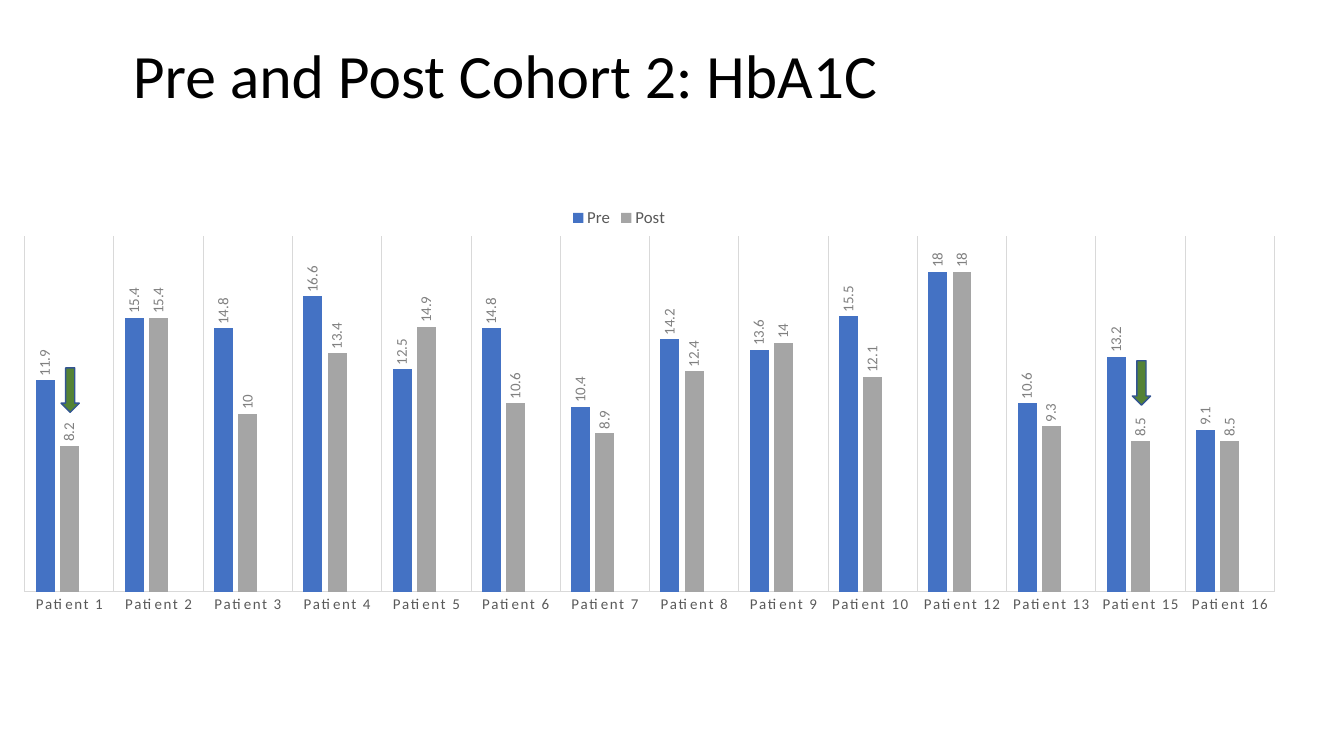
from lxml import etree
from pptx import Presentation
from pptx.chart.data import CategoryChartData
from pptx.dml.color import RGBColor
from pptx.enum.chart import XL_CHART_TYPE as ChartType
from pptx.enum.chart import XL_LABEL_POSITION as LabelPosition
from pptx.enum.chart import XL_LEGEND_POSITION as LegendPosition
from pptx.enum.chart import XL_TICK_LABEL_POSITION as TickLabelPosition
from pptx.enum.chart import XL_TICK_MARK as TickMark
from pptx.enum.shapes import MSO_SHAPE as Shape
from pptx.enum.text import MSO_ANCHOR as Anchor
from pptx.oxml import parse_xml
from pptx.oxml.ns import nsdecls, qn
from pptx.util import Cm, Pt

# Content
TITLE = "Pre and Post Cohort 2: HbA1C"
PATIENTS = [
    # name, pre, post
    ("Patient 1", 11.9, 8.2),
    ("Patient 2", 15.4, 15.4),
    ("Patient 3", 14.8, 10),
    ("Patient 4", 16.6, 13.4),
    ("Patient 5", 12.5, 14.9),
    ("Patient 6", 14.8, 10.6),
    ("Patient 7", 10.4, 8.9),
    ("Patient 8", 14.2, 12.4),
    ("Patient 9", 13.6, 14),
    ("Patient 10 ", 15.5, 12.1),
    ("Patient 12", 18, 18),
    ("Patient 13", 10.6, 9.3),
    ("Patient 15", 13.2, 8.5),
    ("Patient 16", 9.1, 8.5),
]
SERIES_COLORS = {"Pre": "4472C4", "Post": "A5A5A5", "Series 3": "5B9BD5"}
ARROW_TOPS = {"Patient 15": 9.09, "Patient 1": 9.27}  # cm

# Layout: boxes in cm, chart parts as shares of the chart
CHART_BOX = (0.56, 3.99, 31.75, 12.47)
PLOT_AREA = {"x": 0.002, "y": 0.157, "w": 0.992, "h": 0.719}
LEGEND_CORNER = {"x": 0.433, "y": 0.092}
PATIENT_PITCH = CHART_BOX[2] * PLOT_AREA["w"] / len(PATIENTS)
FIRST_ARROW_LEFT = 1.54
FONT = "Calibri"
LABEL_SIZE, LEGEND_SIZE = 10.64, 11.97


def color(hex_text):
    return RGBColor.from_string(hex_text)


def format_font(font, size, hex_text):
    font.name, font.size, font.bold = FONT, Pt(size), False
    font.color.rgb = color(hex_text)


def format_line(line, hex_text, width):
    line.color.rgb = color(hex_text)
    line.width = Pt(width)


def add_text(slide, text, box, *, size, hex_text, anchor, spacing):
    shape = slide.shapes.add_textbox(*map(Cm, box))
    frame = shape.text_frame
    frame.word_wrap = True
    frame.vertical_anchor = anchor
    paragraph = frame.paragraphs[0]
    paragraph.line_spacing = spacing
    run = paragraph.add_run()
    run.text = text
    format_font(run.font, size, hex_text)


def manual_layout(**settings):
    layout = parse_xml(f"<c:layout {nsdecls('c')}><c:manualLayout/></c:layout>")
    for name, value in settings.items():
        etree.SubElement(layout[0], qn(f"c:{name}")).set("val", str(value))
    return layout


def remove_layout(parent):
    for old_layout in parent.findall(qn("c:layout")):
        parent.remove(old_layout)


def add_patient_chart(slide):
    names, pre, post = zip(*PATIENTS)
    values = [pre, post, [None] * len(PATIENTS)]
    data = CategoryChartData()
    data.categories = names
    for series_name, series_values in zip(SERIES_COLORS, values):
        data.add_series(series_name, series_values)
    chart = slide.shapes.add_chart(
        ChartType.COLUMN_CLUSTERED, *map(Cm, CHART_BOX), data
    ).chart
    chart.has_title = False
    format_font(chart.font, 10, "000000")
    plot_area = chart.element.xpath("c:chart/c:plotArea")[0]
    remove_layout(plot_area)
    plot_area.insert(
        0, manual_layout(layoutTarget="inner", xMode="edge", yMode="edge", **PLOT_AREA)
    )

    # Columns and upright value labels
    plot = chart.plots[0]
    plot.gap_width, plot.overlap, plot.vary_by_categories = 116, -28, False
    for series in plot.series:
        series.format.fill.solid()
        series.format.fill.fore_color.rgb = color(SERIES_COLORS[series.name])
        labels = series.data_labels
        labels.show_value = True
        labels.position = LabelPosition.OUTSIDE_END
        format_font(labels.font, LABEL_SIZE, "808080")
    for body in chart.element.xpath(".//c:dLbls/c:txPr/a:bodyPr"):
        body.set("rot", "-5400000")
        body.set("vert", "horz")

    # Axes
    patient_axis = chart.category_axis
    patient_axis.major_tick_mark = patient_axis.minor_tick_mark = TickMark.NONE
    patient_axis.tick_label_position = TickLabelPosition.NEXT_TO_AXIS
    patient_axis.has_major_gridlines = True
    format_line(patient_axis.format.line, "D9D9D9", 0.75)
    format_line(patient_axis.major_gridlines.format.line, "D9D9D9", 0.75)
    format_font(patient_axis.tick_labels.font, LABEL_SIZE, "595959")
    for body in chart.element.xpath(".//c:catAx/c:txPr/a:bodyPr"):
        body.set("rot", "-60000000")
        body.set("vert", "horz")
    for properties in chart.element.xpath(".//c:catAx/c:txPr//a:defRPr"):
        properties.set("spc", "120")
    value_axis = chart.value_axis
    value_axis.minimum_scale, value_axis.maximum_scale = 0, 20
    value_axis.has_major_gridlines = False
    value_axis.visible = False

    # Legend without the empty series
    chart.has_legend = True
    legend = chart.legend
    legend.position = LegendPosition.TOP
    legend.include_in_layout = False
    format_font(legend.font, LEGEND_SIZE, "595959")
    hidden_entry = parse_xml(
        f'<c:legendEntry {nsdecls("c")}><c:idx val="2"/><c:delete val="1"/></c:legendEntry>'
    )
    legend_position = chart.element.xpath(".//c:legend/c:legendPos")[0]
    remove_layout(legend_position.getparent())
    legend_position.addnext(hidden_entry)
    hidden_entry.addnext(manual_layout(xMode="edge", yMode="edge", **LEGEND_CORNER))

    # Kerning for all chart text
    for properties in chart.element.xpath(".//a:defRPr"):
        properties.set("kern", "1200")


def add_drop_arrow(slide, patient, top):
    index = [name for name, *_ in PATIENTS].index(patient)
    left = FIRST_ARROW_LEFT + index * PATIENT_PITCH
    arrow = slide.shapes.add_shape(
        Shape.DOWN_ARROW, Cm(left), Cm(top), Cm(0.46), Cm(1.12)
    )
    arrow.shadow.inherit = False
    arrow.fill.solid()
    arrow.fill.fore_color.rgb = color("548235")
    format_line(arrow.line, "325491", 1)


def main():
    presentation = Presentation()
    presentation.slide_width, presentation.slide_height = Cm(33.87), Cm(19.05)
    slide = presentation.slides.add_slide(presentation.slide_layouts[6])
    add_text(slide, TITLE, (3.1, 0.13, 29.21, 3.68), size=44, hex_text="000000",
             anchor=Anchor.MIDDLE, spacing=0.9)
    add_patient_chart(slide)
    for patient, top in ARROW_TOPS.items():
        add_drop_arrow(slide, patient, top)
    presentation.save("out.pptx")


if __name__ == "__main__":
    main()
